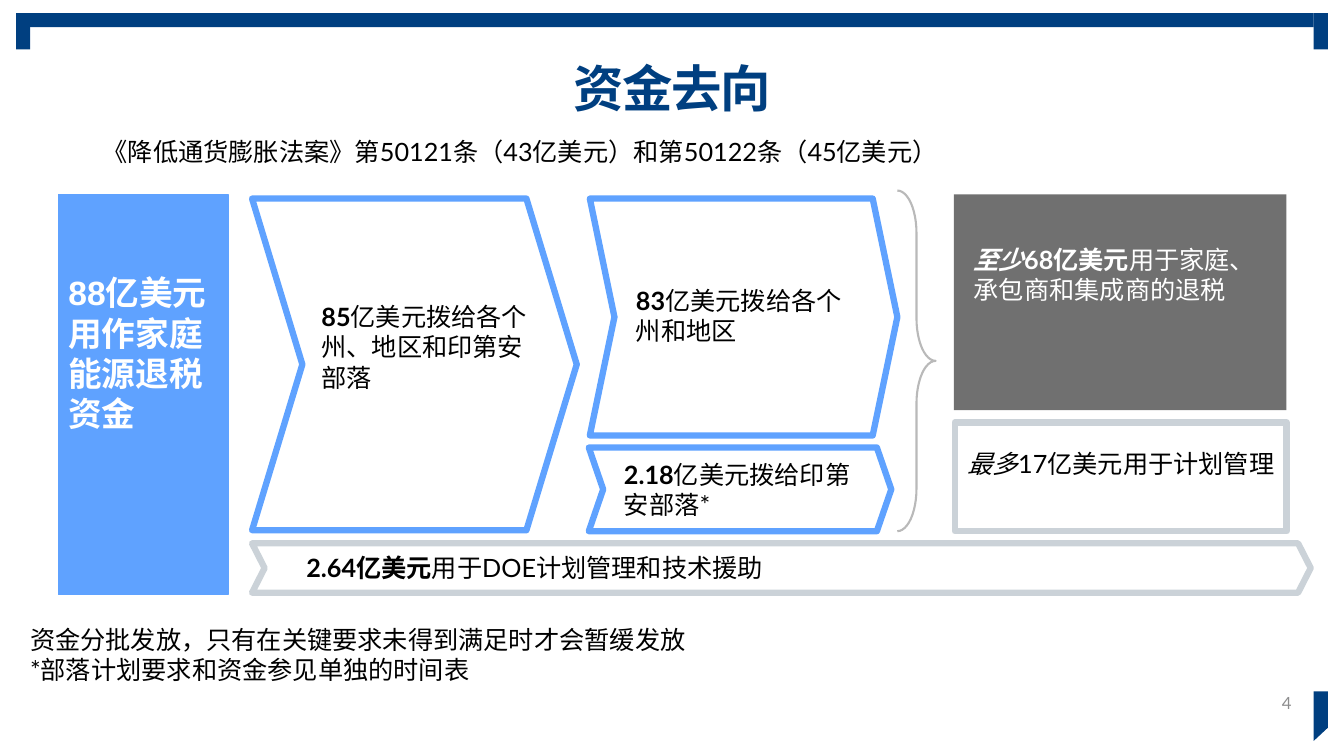
from dataclasses import dataclass

from pptx import Presentation
from pptx.dml.color import RGBColor
from pptx.enum.lang import MSO_LANGUAGE_ID
from pptx.enum.shapes import MSO_SHAPE
from pptx.enum.text import MSO_ANCHOR, MSO_AUTO_SIZE, PP_ALIGN
from pptx.oxml.ns import qn
from pptx.util import Inches, Pt
from lxml import etree

RECTANGLE = MSO_SHAPE.RECTANGLE
PENTAGON = MSO_SHAPE.PENTAGON
CHEVRON = MSO_SHAPE.CHEVRON
RIGHT_BRACE = MSO_SHAPE.RIGHT_BRACE
CENTER, RIGHT = PP_ALIGN.CENTER, PP_ALIGN.RIGHT
TOP, MIDDLE = MSO_ANCHOR.TOP, MSO_ANCHOR.MIDDLE
FIT_SHAPE, NO_FIT = MSO_AUTO_SIZE.SHAPE_TO_FIT_TEXT, MSO_AUTO_SIZE.NONE
CHINESE = MSO_LANGUAGE_ID.SIMPLIFIED_CHINESE


@dataclass(frozen=True)
class Theme:
    navy: str = "003F80"
    blue: str = "5FA2FF"
    pale: str = "CBD2D8"
    gray: str = "707070"
    brace: str = "B9B9B9"
    page_number: str = "8D8D8E"
    white: str = "FFFFFF"
    black: str = "000000"
    font: str = "Lato"
    lead_font: str = "Arial"
    title_size: int = 36
    lead_size: int = 24
    body_size: int = 18
    small_size: int = 12
    outline: float = 4.5


def add_span(para, text, font, size, color, bold=False, italic=False, spacing=None):
    """Add one formatted run, with the same face for Chinese text and digits."""
    span = para.add_run()
    span.text = text
    span.font.name = font
    span.font.size = Pt(size)
    span.font.bold = bold
    span.font.italic = italic
    span.font.color.rgb = RGBColor.from_string(color)
    span.font.language_id = CHINESE
    properties = span.font._element
    latin = properties.find(qn("a:latin"))
    east_asian = etree.Element(qn("a:ea"), typeface=Theme.font)
    latin.addnext(east_asian)
    if spacing is not None:
        properties.set("spc", str(spacing))


class SlideBuilder:
    def __init__(self, page, theme):
        self.page = page
        self.theme = theme

    def title(self, text, place):
        box = self.page.shapes.title
        box.left, box.top, box.width, box.height = map(Inches, place)
        box.text_frame.vertical_anchor = MIDDLE
        box.text_frame.auto_size = NO_FIT
        para = box.text_frame.paragraphs[0]
        para.alignment = CENTER
        para.line_spacing = 0.9
        add_span(para, text, self.theme.font, self.theme.title_size,
                 self.theme.navy, bold=True, spacing=-100)

    def shape(self, kind, place, fill=None, line=None, weight=None, adjust=()):
        shape = self.page.shapes.add_shape(kind, *map(Inches, place))
        shape.shadow.inherit = False
        for index, value in enumerate(adjust):
            shape.adjustments[index] = value
        if fill:
            shape.fill.solid()
            shape.fill.fore_color.rgb = RGBColor.from_string(fill)
        else:
            shape.fill.background()
        if line:
            shape.line.color.rgb = RGBColor.from_string(line)
            shape.line.width = Pt(weight or self.theme.outline)
        else:
            shape.line.fill.background()

    def corner(self, points, fill):
        start, *rest = [(Inches(x), Inches(y)) for x, y in points]
        outline = self.page.shapes.build_freeform(*start)
        outline.add_line_segments(rest, close=True)
        shape = outline.convert_to_shape()
        shape.shadow.inherit = False
        shape.fill.solid()
        shape.fill.fore_color.rgb = RGBColor.from_string(fill)
        shape.line.fill.background()

    def text(self, place, *lines, color=None, size=None, font=None,
             align=None, anchor=TOP, fit=FIT_SHAPE):
        """Each line is a list of (text, style) spans; style holds b and/or i."""
        box = self.page.shapes.add_textbox(*map(Inches, place))
        frame = box.text_frame
        frame.word_wrap = True
        frame.auto_size = fit
        frame.vertical_anchor = anchor
        for index, line in enumerate(lines):
            para = frame.add_paragraph() if index else frame.paragraphs[0]
            if align is not None:
                para.alignment = align
            for words, style in line:
                add_span(para, words, font or self.theme.font,
                         size or self.theme.body_size, color or self.theme.black,
                         bold="b" in style, italic="i" in style)


def main():
    deck = Presentation()
    deck.slide_width, deck.slide_height = Inches(13.33), Inches(7.5)
    theme = Theme()
    slide = SlideBuilder(deck.slides.add_slide(deck.slide_layouts[5]), theme)

    # Frame in the corners
    for place in ((13.03, 0.13, 0.14, 0.36), (0.16, 0.13, 12.87, 0.14),
                  (0.16, 0.13, 0.14, 0.36)):
        slide.shape(RECTANGLE, place, fill=theme.navy)
    slide.corner([(13.03, 6.86), (13.17, 6.86), (13.17, 7.22), (13.03, 7.35)], theme.navy)

    # Heading
    slide.title("资金去向", (0.92, 0.58, 11.5, 0.65))
    slide.text((0.92, 1.3, 12.28, 0.4),
               [("《降低通货膨胀法案》第50121条（43亿美元）和第50122条（45亿美元）", "")])

    # Total funding
    slide.shape(PENTAGON, (0.58, 1.93, 1.68, 3.97), theme.blue, theme.blue, 1, [0])
    slide.text((0.58, 2.65, 1.66, 2.52), [("88亿美元用作家庭能源退税资金", "b")],
               color=theme.white, size=theme.lead_size, font=theme.lead_font)

    # Flow of funds: outline place, tip, line colour, text place, spans
    flow = [
        ((2.5, 1.97, 3.22, 3.29), 0.155, theme.blue, (3.09, 2.94, 2.26, 1.31),
         [("85", "b"), ("亿美元拨给各个州、地区和印第安部落", "")]),
        ((5.85, 1.97, 3.05, 2.35), 0.104, theme.blue, (6.21, 2.78, 2.44, 0.71),
         [("83", "b"), ("亿美元拨给各个州和地区", "")]),
        ((5.84, 4.44, 3, 0.83), 0.172, theme.blue, (6.09, 4.51, 2.51, 0.71),
         [("2.18", "b"), ("亿美元拨给印第安部落*", "")]),
        ((9.47, 4.19, 3.29, 1.08), 0, theme.pale, (9.5, 4.4, 3.25, 0.71),
         [("最多", "i"), ("17亿美元用于计划管理", "")]),
        ((2.5, 5.39, 10.5, 0.49), 0.255, theme.pale, (2.94, 5.43, 9.7, 0.4),
         [("2.64亿美元", "b"), ("用于DOE计划管理和技术援助", "")]),
    ]
    for place, tip, line, text_place, spans in flow:
        slide.shape(CHEVRON, place, theme.white, line, adjust=[tip])
        slide.text(text_place, spans)

    # Brace and rebates
    slide.shape(RIGHT_BRACE, (8.9, 1.89, 0.38, 3.38), line=theme.brace, weight=1.5,
                adjust=[1.114, 0.5])
    slide.shape(RECTANGLE, (9.46, 1.93, 3.3, 2.14), fill=theme.gray)
    slide.text((9.56, 2.37, 3.1, 1.31),
               [("至少", "bi"), ("68亿美元", "b"), ("用于家庭、承包商和集成商的退税", "")],
               color=theme.white)

    # Notes at the foot and page number
    slide.text((0.2, 6.14, 10.04, 0.71),
               [("资金分批发放，只有在关键要求未得到满足时才会暂缓发放", "")],
               [("*部落计划要求和资金参见单独的时间表", "")])
    slide.text((9.91, 6.77, 3, 0.4), [("4", "")], color=theme.page_number,
               size=theme.small_size, align=RIGHT, anchor=MIDDLE, fit=NO_FIT)

    deck.save("out.pptx")


if __name__ == "__main__":
    main()
